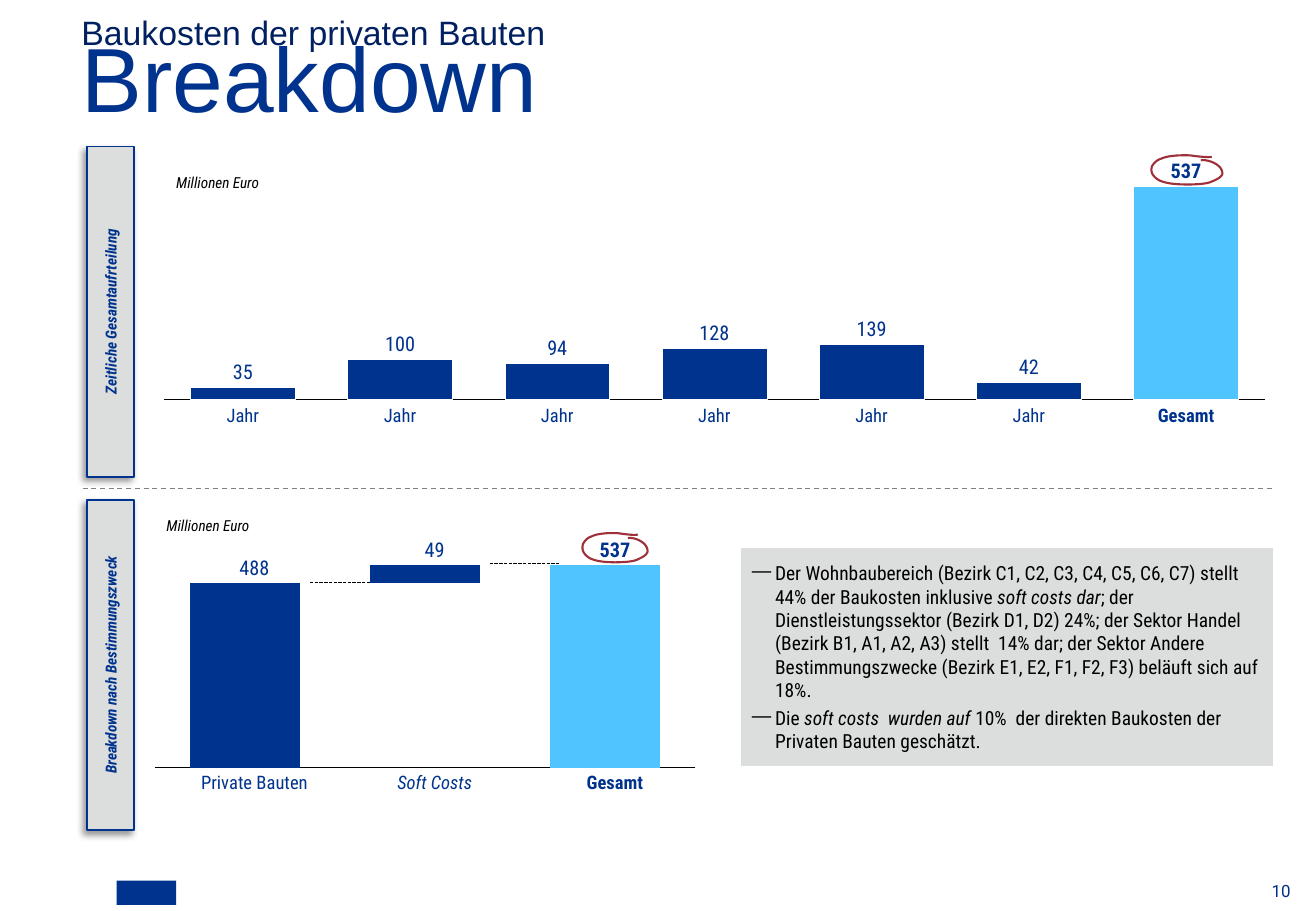
from lxml.etree import SubElement
from pptx import Presentation
from pptx.chart.data import CategoryChartData
from pptx.dml.color import RGBColor
from pptx.enum.chart import XL_CHART_TYPE, XL_TICK_LABEL_POSITION, XL_TICK_MARK
from pptx.enum.dml import MSO_LINE
from pptx.enum.shapes import MSO_CONNECTOR, MSO_SHAPE
from pptx.enum.text import MSO_ANCHOR, MSO_AUTO_SIZE, PP_ALIGN
from pptx.oxml import parse_xml
from pptx.oxml.ns import nsdecls, qn
from pptx.util import Inches, Pt

hex_color = RGBColor.from_string
BLUE, SKY, GREY, RED, BLACK = "00338D", "50C4FF", "DCDDDD", "9E3039", "000000"
CONDENSED = "Roboto Condensed"
LABEL_HEIGHT = 0.2


def write(shape, text, size, color=BLUE, name=CONDENSED, bold=False, italic=False,
          align=PP_ALIGN.CENTER, anchor=MSO_ANCHOR.BOTTOM, wrap=False):
    """Fill a shape with one formatted paragraph, without margins, and return it."""
    frame = shape.text_frame
    frame.text = text
    frame.auto_size = MSO_AUTO_SIZE.NONE
    frame.word_wrap = wrap
    frame.vertical_anchor = anchor
    frame.margin_left = frame.margin_right = frame.margin_top = frame.margin_bottom = 0
    paragraph = frame.paragraphs[0]
    paragraph.alignment = align
    for run in paragraph.runs:
        font = run.font
        font.size, font.name, font.bold, font.italic = Pt(size), name, bold, italic
        font.color.rgb = hex_color(color)
    return paragraph


def add_box(left, top, width, height):
    return slide.shapes.add_textbox(*map(Inches, (left, top, width, height)))


presentation = Presentation()
presentation.slide_width, presentation.slide_height = Inches(10.83), Inches(7.5)
slide = presentation.slides.add_slide(presentation.slide_layouts[5])

# Headings and footer
title = slide.shapes.title
title.left, title.top, title.width, title.height = map(Inches, (0.67, 0.26, 9.5, 0.79))
subtitle = add_box(0.67, 0.09, 9.5, 0.33)
for shape, text, size, color in ((title, "Breakdown", 54, BLUE),
                                 (subtitle, "Baukosten der privaten Bauten", 20, "002060")):
    heading = write(shape, text, size, color, "Arial", align=PP_ALIGN.LEFT, wrap=True)
    heading.line_spacing = 0.7
write(add_box(9.2, 7.26, 1.42, 0.16), "10", 10, "003087", "Roboto", align=PP_ALIGN.RIGHT)
emblem = slide.shapes.add_shape(MSO_SHAPE.RECTANGLE, *map(Inches, (0.96, 7.25, 0.49, 0.2)))
emblem.shadow.inherit = False
emblem.fill.solid()
emblem.fill.fore_color.rgb = hex_color(BLUE)
emblem.line.fill.background()

# Divider and the steps between the lower columns
for left, right, top, color, width, dash in (
        (0.68, 10.48, 4.02, "808080", 0.75, MSO_LINE.DASH),
        (2.55, 3.13, 4.79, BLACK, 0.25, MSO_LINE.LONG_DASH),
        (4.03, 4.61, 4.64, BLACK, 0.25, MSO_LINE.LONG_DASH)):
    connector = slide.shapes.add_connector(
        MSO_CONNECTOR.STRAIGHT, *map(Inches, (left, top, right, top)))
    connector.line.color.rgb = hex_color(color)
    connector.line.width = Pt(width)
    connector.line.dash_style = dash
    SubElement(connector._element.spPr, qn("a:effectLst"))

# Both rows: side tab, unit, column chart, labels and ring round the total.
# A column is (value label, category label, italic); plot is left, top, width, height
# as shares of the chart; a series is (values, colour of each column).
rows = [
    dict(tab="Zeitliche Gesamtaufrteilung", tab_top=1.2, unit=(1.45, 1.43),
         chart=(1.26, 1.44, 9.24, 1.94), plot=(0.01, 0.047, 0.98, 0.907), gap=50,
         series=[((6, 19, 17, 24, 26, 8, 100), [BLUE] * 6 + [SKY])], outline=True,
         columns=[(value, "Jahr", False) for value in ("35", "100", "94", "128", "139", "42")]
         + [("537", "Gesamt", False)],
         category_top=3.33, label_shift=0, ring=(9.45, 1.27, 0.61)),
    dict(tab="Breakdown nach Bestimmungszweck", tab_top=4.11, unit=(1.37, 4.25),
         chart=(1.18, 4.56, 4.63, 1.85), plot=(0.02, 0.049, 0.961, 0.903), gap=64,
         series=[((91, 91, 100), [BLUE, None, SKY]), ((None, 9, None), [BLUE] * 3)],
         outline=False,
         columns=[("488", "Private Bauten", False), ("49", "Soft Costs", True),
                  ("537", "Gesamt", False)],
         category_top=6.35, label_shift=0.08, ring=(4.77, 4.38, 0.56)),
]
# Bezier points of the ring in hundredths of an inch: two controls and an end per curve
RING_START = (53, 2)
RING_CURVES = [
    ((52, 3), (42, 2), (35, 1)), ((35, 1), (18, 0), (10, 4)), ((10, 4), (6, 5), (3, 10)),
    ((3, 11), (0, 17), (10, 22)), ((11, 22), (15, 25), (33, 25)),
    ((33, 25), (47, 25), (52, 23)), ((54, 22), (61, 20), (62, 16)), ((62, 8), (49, 4), (44, 5)),
]
RING_STEPS = 10

for row in rows:
    tab = slide.shapes.add_shape(
        MSO_SHAPE.RECTANGLE, *map(Inches, (-0.45, row["tab_top"] + 1.17, 2.72, 0.39)))
    tab.rotation = 270
    tab.fill.solid()
    tab.fill.fore_color.rgb = hex_color(GREY)
    tab.line.color.rgb = hex_color(BLUE)
    tab.line.width = Pt(1)
    tab.shadow.inherit = False
    tab._element.spPr.find(qn("a:effectLst")).append(parse_xml(
        f'<a:outerShdw {nsdecls("a")} blurRad="{Pt(4)}" dist="{Pt(3)}" dir="8100000" '
        f'rotWithShape="0"><a:srgbClr val="{BLACK}"><a:alpha val="40000"/></a:srgbClr>'
        '</a:outerShdw>'))
    write(tab, row["tab"], 9, bold=True, italic=True, anchor=MSO_ANCHOR.MIDDLE)
    write(add_box(*row["unit"], 0.95, 0.15), "Millionen Euro", 9, BLACK, italic=True,
          align=PP_ALIGN.LEFT, anchor=MSO_ANCHOR.TOP)

    data = CategoryChartData()
    data.categories = [str(number + 1) for number in range(len(row["columns"]))]
    for number, (values, _) in enumerate(row["series"], 1):
        data.add_series(f"Series {number}", values)
    chart = slide.shapes.add_chart(
        XL_CHART_TYPE.COLUMN_STACKED, *map(Inches, row["chart"]), data).chart
    chart.has_legend = chart.has_title = False
    chart.font.size, chart.font.name = Pt(10), "Arial"
    chart.font.color.rgb = hex_color(BLACK)
    categories, scale, bars = chart.category_axis, chart.value_axis, chart.plots[0]
    categories.tick_label_position = XL_TICK_LABEL_POSITION.NONE
    categories.major_tick_mark = XL_TICK_MARK.NONE
    categories.format.line.color.rgb = hex_color(BLACK)
    categories.format.line.width = Pt(0.75)
    scale.minimum_scale, scale.maximum_scale = 0, 100
    scale.has_major_gridlines = scale.visible = False
    bars.gap_width, bars.overlap, bars.vary_by_categories = row["gap"], 100, False
    for series, (_, colors) in zip(bars.series, row["series"]):
        for index, color in enumerate(colors):
            point = series.points[index].format
            if color:
                point.fill.solid()
                point.fill.fore_color.rgb = hex_color(color)
            else:
                point.fill.background()
            if row["outline"]:
                point.line.color.rgb = hex_color("FFFFFF")
                point.line.width = Pt(0.25)
            else:
                point.line.fill.background()
    plot_area = chart._chartSpace.chart.plotArea
    for old_layout in plot_area.findall(qn("c:layout")):
        plot_area.remove(old_layout)
    shares = "".join(f'<c:{key} val="{share}"/>' for key, share in zip("xywh", row["plot"]))
    plot_area.insert(0, parse_xml(
        f'<c:layout {nsdecls("c")}><c:manualLayout><c:layoutTarget val="inner"/>'
        f'<c:xMode val="edge"/><c:yMode val="edge"/>{shares}</c:manualLayout></c:layout>'))

    left, top, width, height = row["chart"]
    plot_left, plot_top, plot_width, plot_height = row["plot"]
    column_width = width * plot_width / len(row["columns"])
    for index, (value, category, italic) in enumerate(row["columns"]):
        label_left = left + width * plot_left + index * column_width + row["label_shift"]
        level = sum(values[index] or 0 for values, _ in row["series"])
        bar_top = top + height * (plot_top + plot_height * (1 - level / 100))
        bold = category == "Gesamt"
        write(add_box(label_left, bar_top - 0.03 - LABEL_HEIGHT, column_width, LABEL_HEIGHT),
              value, 12, bold=bold)
        write(add_box(label_left, row["category_top"], column_width, LABEL_HEIGHT),
              category, 11, bold=bold, italic=italic, anchor=MSO_ANCHOR.TOP)

    ring_left, ring_top, ring_width = row["ring"]
    points = [RING_START]
    for first, second, end in RING_CURVES:
        start = points[-1]
        for step in range(1, RING_STEPS + 1):
            t = step / RING_STEPS
            points.append(tuple(
                a * (1 - t) ** 3 + 3 * b * t * (1 - t) ** 2 + 3 * c * t ** 2 * (1 - t) + d * t ** 3
                for a, b, c, d in zip(start, first, second, end)))
    places = [(Inches(ring_left + x / 62 * ring_width), Inches(ring_top + y / 100))
              for x, y in points]
    builder = slide.shapes.build_freeform(*places[0])
    builder.add_line_segments(places[1:], close=False)
    ring = builder.convert_to_shape()
    ring.shadow.inherit = False
    ring.fill.background()
    ring.line.color.rgb = hex_color(RED)
    ring.line.width = Pt(1.25)

# Comment panel; every second run is italic
remarks = [
    ("Der Wohnbaubereich (Bezirk C1, C2, C3, C4, C5, C6, C7) stellt 44% der Baukosten inklusive ",
     "soft costs dar",
     "; der Dienstleistungssektor (Bezirk D1, D2) 24%; der Sektor Handel (Bezirk B1, A1, A2, A3) "
     "stellt  14% dar; der Sektor Andere Bestimmungszwecke (Bezirk E1, E2, F1, F2, F3) "
     "beläuft sich auf 18%."),
    ("Die ", "soft costs  wurden auf ",
     "10%  der direkten Baukosten der Privaten Bauten geschätzt."),
]
panel = slide.shapes.add_shape(MSO_SHAPE.PENTAGON, *map(Inches, (6.09, 4.5, 4.4, 1.82)))
panel.adjustments[0] = 0
panel.shadow.inherit = False
panel.fill.solid()
panel.fill.fore_color.rgb = hex_color(GREY)
panel.line.color.rgb = hex_color("FFFFFF")
panel.line.width = Pt(1.5)
frame = panel.text_frame
frame.word_wrap = True
frame.vertical_anchor = MSO_ANCHOR.MIDDLE
for index, texts in enumerate(remarks):
    paragraph = frame.add_paragraph() if index else frame.paragraphs[0]
    properties = paragraph._p.get_or_add_pPr()
    properties.set("marL", str(Inches(0.19)))
    properties.set("indent", str(Inches(-0.19)))
    SubElement(SubElement(properties, qn("a:buClr")), qn("a:srgbClr")).set("val", BLACK)
    SubElement(properties, qn("a:buChar")).set("char", "—")
    paragraph.alignment = PP_ALIGN.LEFT
    paragraph.space_before = Pt(3 * index)
    for number, text in enumerate(texts):
        run = paragraph.add_run()
        run.text = text
        run.font.size, run.font.name, run.font.italic = Pt(11.5), CONDENSED, number == 1
        run.font.color.rgb = hex_color(BLACK)

presentation.save("out.pptx")
